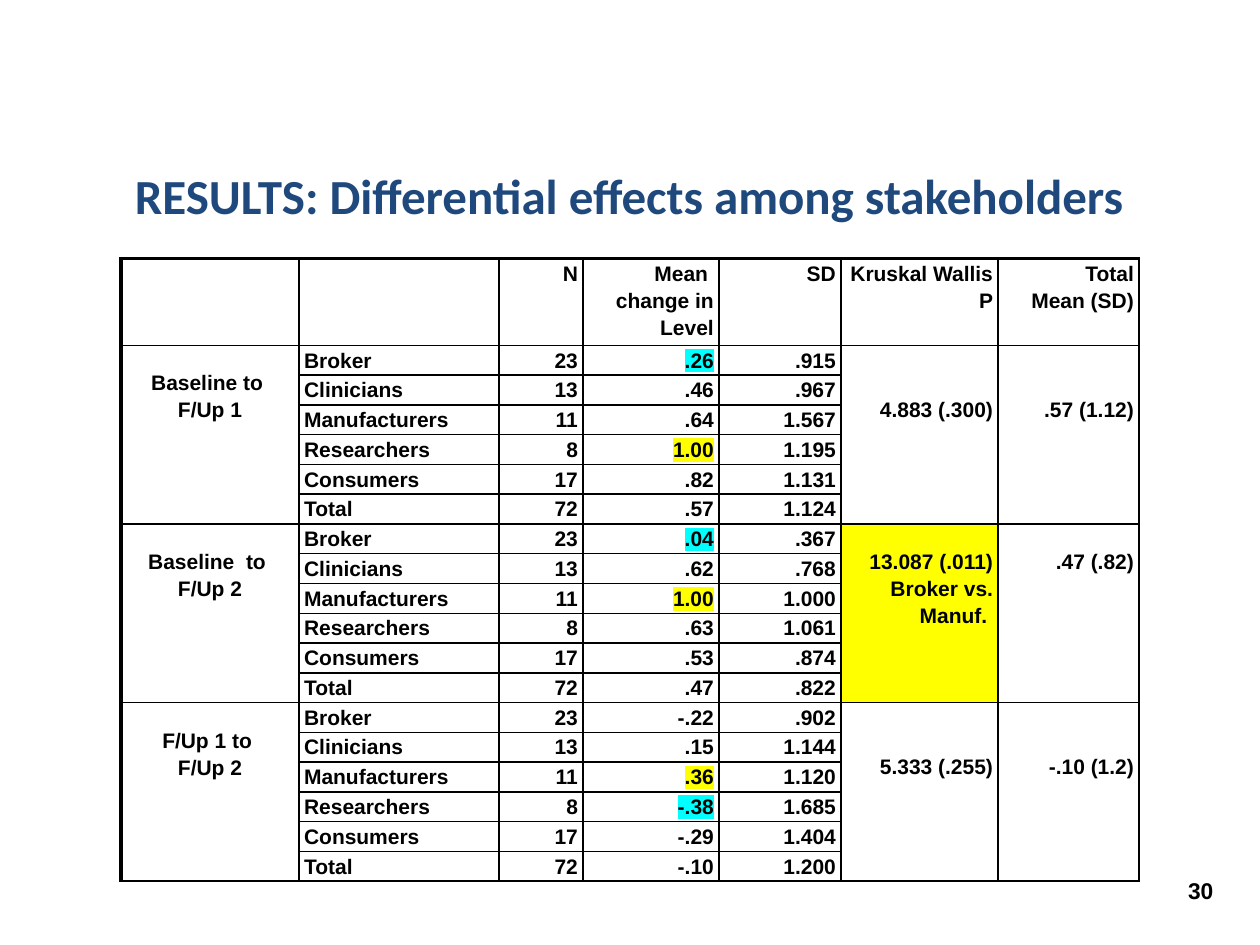
from lxml import etree
from pptx import Presentation
from pptx.dml.color import RGBColor
from pptx.enum.text import MSO_ANCHOR, PP_ALIGN
from pptx.oxml.ns import qn
from pptx.util import Cm, Pt

LEFT, CENTER, RIGHT = PP_ALIGN.LEFT, PP_ALIGN.CENTER, PP_ALIGN.RIGHT
MIDDLE, BOTTOM = MSO_ANCHOR.MIDDLE, MSO_ANCHOR.BOTTOM

BLACK = RGBColor(0x00, 0x00, 0x00)
WHITE = RGBColor(0xFF, 0xFF, 0xFF)
NAVY = RGBColor(0x1F, 0x49, 0x7D)
CYAN = RGBColor(0x00, 0xFF, 0xFF)
YELLOW = RGBColor(0xFF, 0xFF, 0x00)

COLUMN_WIDTHS = (3.59, 4.03, 1.69, 2.74, 2.46, 3.17, 2.84)
HEADER_HEIGHT, ROW_HEIGHT = 1.63, 0.6
ONE_LINE_DOWN, TWO_LINES_DOWN = 0.46, 1.0

HEADERS = ("", "", "N", "Mean  change in Level", "SD",
           "Kruskal Wallis\nP", "Total\nMean (SD)")
STAKEHOLDERS = (("Broker", "23"), ("Clinicians", "13"), ("Manufacturers", "11"),
                ("Researchers", "8"), ("Consumers", "17"), ("Total", "72"))
# Period, mean changes, SDs, test, total, drop of the results, test fill,
# highlighted means
PERIODS = (
    ("Baseline to \nF/Up 1",
     (".26", ".46", ".64", "1.00", ".82", ".57"),
     (".915", ".967", "1.567", "1.195", "1.131", "1.124"),
     "4.883 (.300)", ".57 (1.12)", TWO_LINES_DOWN, WHITE,
     {"Broker": CYAN, "Researchers": YELLOW}),
    ("Baseline  to \nF/Up 2",
     (".04", ".62", "1.00", ".63", ".53", ".47"),
     (".367", ".768", "1.000", "1.061", ".874", ".822"),
     "13.087 (.011)\nBroker vs. Manuf. ", ".47 (.82)", ONE_LINE_DOWN, YELLOW,
     {"Broker": CYAN, "Manufacturers": YELLOW}),
    ("F/Up 1 to \nF/Up 2",
     ("-.22", ".15", ".36", "-.38", "-.29", "-.10"),
     (".902", "1.144", "1.120", "1.685", "1.404", "1.200"),
     "5.333 (.255)", "-.10 (1.2)", TWO_LINES_DOWN, WHITE,
     {"Manufacturers": YELLOW, "Researchers": CYAN}),
)


def write(frame, text, font="Arial", size=12, color=BLACK, align=RIGHT,
          spacing=None, highlight=None):
    frame.word_wrap = True
    for index, line in enumerate(text.split("\n")):
        para = frame.add_paragraph() if index else frame.paragraphs[0]
        para.alignment = align
        para.line_spacing = spacing
        span = para.add_run()
        span.text = line
        span.font.size, span.font.bold = Pt(size), True
        span.font.color.rgb = color
        if highlight is not None:
            mark = etree.SubElement(span.font._element, qn("a:highlight"))
            etree.SubElement(mark, qn("a:srgbClr"), val=str(highlight))
        span.font.name = font


def draw_borders(cell, **widths):
    """Draw black cell edges, keyed L, R, T and B, with widths in points."""
    properties = cell._tc.get_or_add_tcPr()
    for side, width in widths.items():
        line = etree.SubElement(properties, qn("a:ln" + side), w=str(Pt(width)))
        fill = etree.SubElement(line, qn("a:solidFill"))
        etree.SubElement(fill, qn("a:srgbClr"), val=str(BLACK))


class ResultsPage:
    def __init__(self, deck):
        self.page = deck.slides.add_slide(deck.slide_layouts[5])

    def title(self, text, left, top, width, height):
        box = self.page.shapes.title
        box.left, box.top = Cm(left), Cm(top)
        box.width, box.height = Cm(width), Cm(height)
        box.text_frame.vertical_anchor = BOTTOM
        write(box.text_frame, text, font="Calibri", size=28, color=NAVY,
              align=CENTER)

    def page_number(self, text, left, top, width, height):
        box = self.page.shapes.add_textbox(Cm(left), Cm(top), Cm(width), Cm(height))
        box.text_frame.vertical_anchor = MIDDLE
        write(box.text_frame, text, size=13)

    def table(self, left, top, row_count):
        height = HEADER_HEIGHT + ROW_HEIGHT * (row_count - 1)
        table = self.page.shapes.add_table(
            row_count, len(COLUMN_WIDTHS), Cm(left), Cm(top),
            Cm(sum(COLUMN_WIDTHS)), Cm(height)).table
        table.first_row = table.horz_banding = False
        for column, width in zip(table.columns, COLUMN_WIDTHS):
            column.width = Cm(width)
        for index, row in enumerate(table.rows):
            row.height = Cm(ROW_HEIGHT if index else HEADER_HEIGHT)
            for number, cell in enumerate(row.cells):
                draw_borders(cell, L=1 if number else 2.25, R=1,
                             T=1 if index else 2.25, B=1)
                cell.margin_left = cell.margin_right = Cm(0.1)
                cell.margin_top = cell.margin_bottom = 0
                cell.fill.solid()
                cell.fill.fore_color.rgb = WHITE
        return table

    def cell(self, cell, text, drop=0, fill=WHITE, **style):
        cell.margin_top = Cm(drop)
        cell.fill.fore_color.rgb = fill
        write(cell.text_frame, text, spacing=1.15, **style)

    def period(self, table, first, period):
        """Fill the block of rows for one period, from row number first."""
        name, means, deviations, test, total, drop, fill, marks = period
        last = first + len(STAKEHOLDERS) - 1
        for column in (0, 5, 6):
            table.cell(first, column).merge(table.cell(last, column))
        self.cell(table.cell(first, 0), name, drop=ONE_LINE_DOWN, align=CENTER)
        self.cell(table.cell(first, 5), test, drop=drop, fill=fill)
        self.cell(table.cell(first, 6), total, drop=drop)
        rows = zip(STAKEHOLDERS, means, deviations)
        for row, ((group, count), mean, deviation) in enumerate(rows, first):
            self.cell(table.cell(row, 1), group, align=LEFT)
            self.cell(table.cell(row, 2), count)
            self.cell(table.cell(row, 3), mean, highlight=marks.get(group))
            self.cell(table.cell(row, 4), deviation)


def main():
    deck = Presentation()
    deck.slide_width, deck.slide_height = Cm(25.4), Cm(19.05)
    results = ResultsPage(deck)
    results.page_number("30", 19.6, 17.48, 5.11, 0.94)
    block = len(STAKEHOLDERS)
    table = results.table(2.44, 5.21, 1 + block * len(PERIODS))
    for column, header in enumerate(HEADERS):
        if header:
            results.cell(table.cell(0, column), header)
    for index, period in enumerate(PERIODS):
        results.period(table, 1 + index * block, period)
    results.title("RESULTS: Differential effects among stakeholders",
                  0.97, 3.07, 23.42, 1.57)
    deck.save("out.pptx")


if __name__ == "__main__":
    main()
